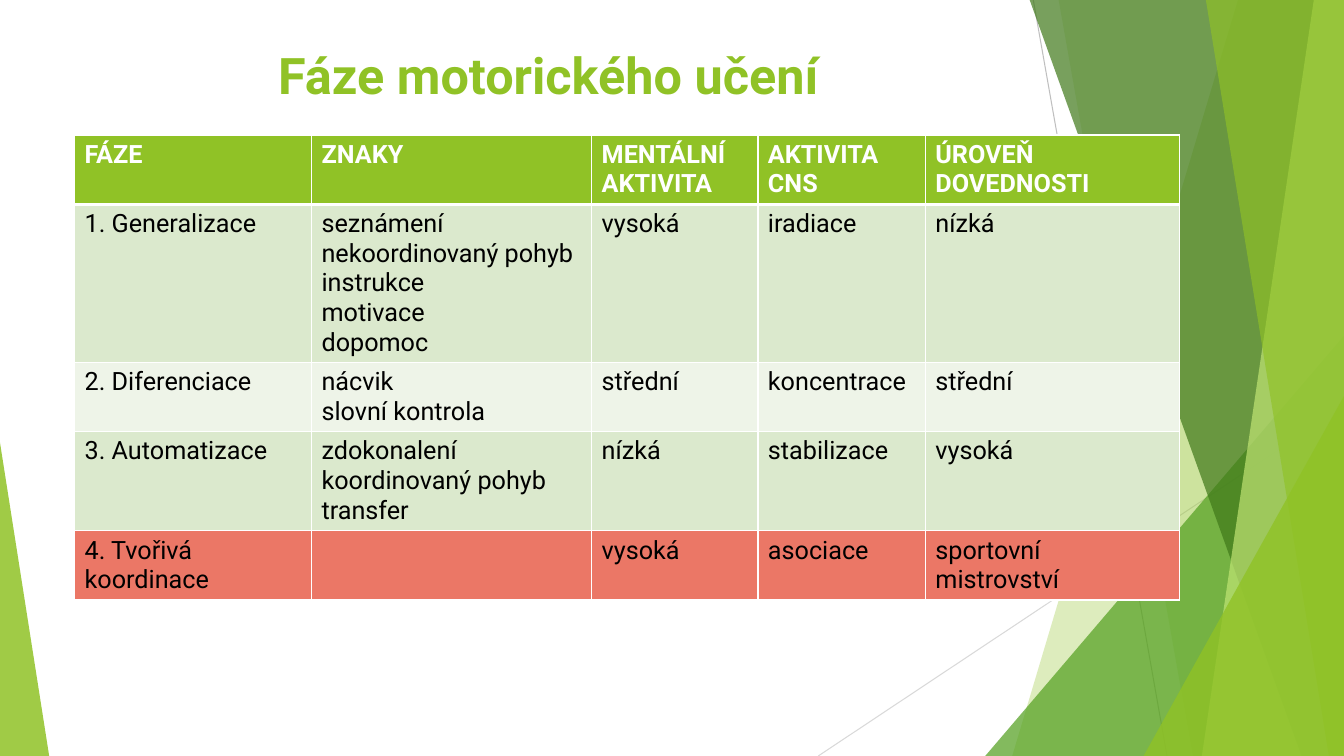
from lxml import etree
from pptx import Presentation
from pptx.dml.color import RGBColor
from pptx.enum.shapes import MSO_CONNECTOR, MSO_SHAPE
from pptx.enum.text import MSO_ANCHOR, PP_ALIGN
from pptx.oxml.ns import qn
from pptx.util import Cm, Pt

STRAIGHT = MSO_CONNECTOR.STRAIGHT
TRIANGLE = MSO_SHAPE.ISOSCELES_TRIANGLE
TOP = MSO_ANCHOR.TOP
CENTER = PP_ALIGN.CENTER

WHITE = RGBColor(0xFF, 0xFF, 0xFF)
BLACK = RGBColor(0x00, 0x00, 0x00)
GREY = RGBColor(0xBF, 0xBF, 0xBF)
LIGHT_GREY = RGBColor(0xD9, 0xD9, 0xD9)
LIME = RGBColor(0x90, 0xC2, 0x26)
PALE_LIME = RGBColor(0xC0, 0xE4, 0x74)
GREEN = RGBColor(0x54, 0xA0, 0x21)
DARK_GREEN = RGBColor(0x3F, 0x78, 0x19)
ROW_GREEN = RGBColor(0xDB, 0xE9, 0xCD)
ROW_PALE = RGBColor(0xEE, 0xF4, 0xE8)
ROW_RED = RGBColor(0xEB, 0x77, 0x66)

FONT = "Roboto"
WIDTH, HEIGHT = 33.87, 19.05
TITLE_FONT = {"name": FONT, "size": Pt(36), "bold": True}
HEAD_FONT = {"name": FONT, "size": Pt(18), "bold": True}
BODY_FONT = {"name": FONT, "size": Pt(18), "bold": False}

RAYS = [
    (26.04, 0, 29.41, HEIGHT, GREY),
    (WIDTH, 10.24, 20.62, HEIGHT, LIGHT_GREY),
]
FACETS = [
    ("band", 2.67, 8.36, LIME, 30),
    ("band", 7.19, 3.81, LIME, 20),
    ("corner", 9.04, 10.59, GREEN, 72),
    ("band", 7.92, 1.07, DARK_GREEN, 70),
    ("band", 0.76, 3.58, PALE_LIME, 70),
    ("band", 3.48, 0.38, LIME, 65),
    ("corner", 5.05, 9.07, LIME, 80),
]
COLUMNS = [5.97, 7.06, 4.19, 4.22, 6.4]
ROWS = [
    (1.75, LIME, ["FÁZE", "ZNAKY", "MENTÁLNÍ\nAKTIVITA", "AKTIVITA\nCNS",
                  "ÚROVEŇ\nDOVEDNOSTI"]),
    (3.98, ROW_GREEN, ["1. Generalizace",
                       "seznámení\nnekoordinovaný pohyb\ninstrukce\nmotivace\ndopomoc",
                       "vysoká", "iradiace", "nízká"]),
    (1.74, ROW_PALE, ["2. Diferenciace", "nácvik\nslovní kontrola", "střední",
                      "koncentrace", "střední"]),
    (2.5, ROW_GREEN, ["3. Automatizace", "zdokonalení\nkoordinovaný pohyb\ntransfer",
                      "nízká", "stabilizace", "vysoká"]),
    (1.74, ROW_RED, ["4. Tvořivá koordinace", "", "vysoká", "asociace",
                     "sportovní mistrovství"]),
]


def format_text(tf, font, color):
    for p in tf.paragraphs:
        for key, value in font.items():
            setattr(p.font, key, value)
        p.font.color.rgb = color


def paint(sp, color, opacity):
    sp.shadow.inherit = False
    sp.line.fill.background()
    sp.fill.solid()
    sp.fill.fore_color.rgb = color
    clr = sp.fill._xPr.find(".//" + qn("a:srgbClr"))
    etree.SubElement(clr, qn("a:alpha"), val=str(opacity * 1000))


def add_corner(s, left, bottom, width, height, apex, color, opacity):
    sp = s.shapes.add_shape(TRIANGLE, Cm(left), Cm(bottom - height), Cm(width), Cm(height))
    sp.adjustments[0] = apex
    paint(sp, color, opacity)


def add_band(s, right, top, bottom, upper, lower, color, opacity):
    builder = s.shapes.build_freeform(Cm(right - upper), Cm(top))
    corners = [(right, top), (right, bottom), (right - lower, bottom)]
    builder.add_line_segments([(Cm(x), Cm(y)) for x, y in corners], close=True)
    paint(builder.convert_to_shape(), color, opacity)


def add_background(s, left, top, width, height):
    right, bottom = left + width, top + height
    for x1, y1, x2, y2, color in RAYS:
        ray = s.shapes.add_connector(STRAIGHT, Cm(left + x1), Cm(top + y1),
                                     Cm(left + x2), Cm(top + y2))
        ray.line.color.rgb = color
        ray.line.width = Pt(0.75)
        etree.SubElement(ray._element.spPr, qn("a:effectLst"))
    for kind, a, b, color, opacity in FACETS:
        if kind == "band":
            add_band(s, right, top, bottom, a, b, color, opacity)
        else:
            add_corner(s, right - a, bottom, a, b, 1, color, opacity)
    add_corner(s, left, bottom, 1.24, 7.9, 0, LIME, 85)


def add_title(s, left, top, width, height):
    title = s.shapes.title
    title.left, title.top = Cm(left), Cm(top)
    title.width, title.height = Cm(width), Cm(height)
    tf = title.text_frame
    tf.text = "Fáze motorického učení"
    tf.vertical_anchor = TOP
    tf.margin_top = Cm(0.2)
    tf.paragraphs[0].alignment = CENTER
    format_text(tf, TITLE_FONT, LIME)
    title.element.getparent().append(title.element)


def add_borders(cell, widths):
    tcPr = cell._tc.get_or_add_tcPr()
    for side, width in widths.items():
        ln = etree.SubElement(tcPr, qn("a:ln" + side), w=str(Pt(width)))
        fill = etree.SubElement(ln, qn("a:solidFill"))
        etree.SubElement(fill, qn("a:srgbClr"), val=str(WHITE))


def add_phase_table(s, left, top, width, height):
    frame = s.shapes.add_table(len(ROWS), len(COLUMNS), Cm(left), Cm(top),
                               Cm(width), Cm(height))
    table = frame.table
    for column, column_width in zip(table.columns, COLUMNS):
        column.width = Cm(column_width)
    for i, (row_height, fill, texts) in enumerate(ROWS):
        table.rows[i].height = Cm(row_height)
        font, color = (BODY_FONT, BLACK) if i else (HEAD_FONT, WHITE)
        borders = {"L": 1, "R": 1, "T": 3 if i == 1 else 1, "B": 1 if i else 3}
        for j, text in enumerate(texts):
            cell = table.cell(i, j)
            cell.text = text
            format_text(cell.text_frame, font, color)
            add_borders(cell, borders)
            cell.fill.solid()
            cell.fill.fore_color.rgb = fill


def main():
    prs = Presentation()
    prs.slide_width, prs.slide_height = Cm(WIDTH), Cm(HEIGHT)
    s = prs.slides.add_slide(prs.slide_layouts[5])
    add_background(s, 0, 0, WIDTH, HEIGHT)
    add_title(s, 1.88, 0.91, 23.88, 2.26)
    add_phase_table(s, 1.88, 3.4, sum(COLUMNS), sum(row[0] for row in ROWS))
    prs.save("out.pptx")


if __name__ == "__main__":
    main()
